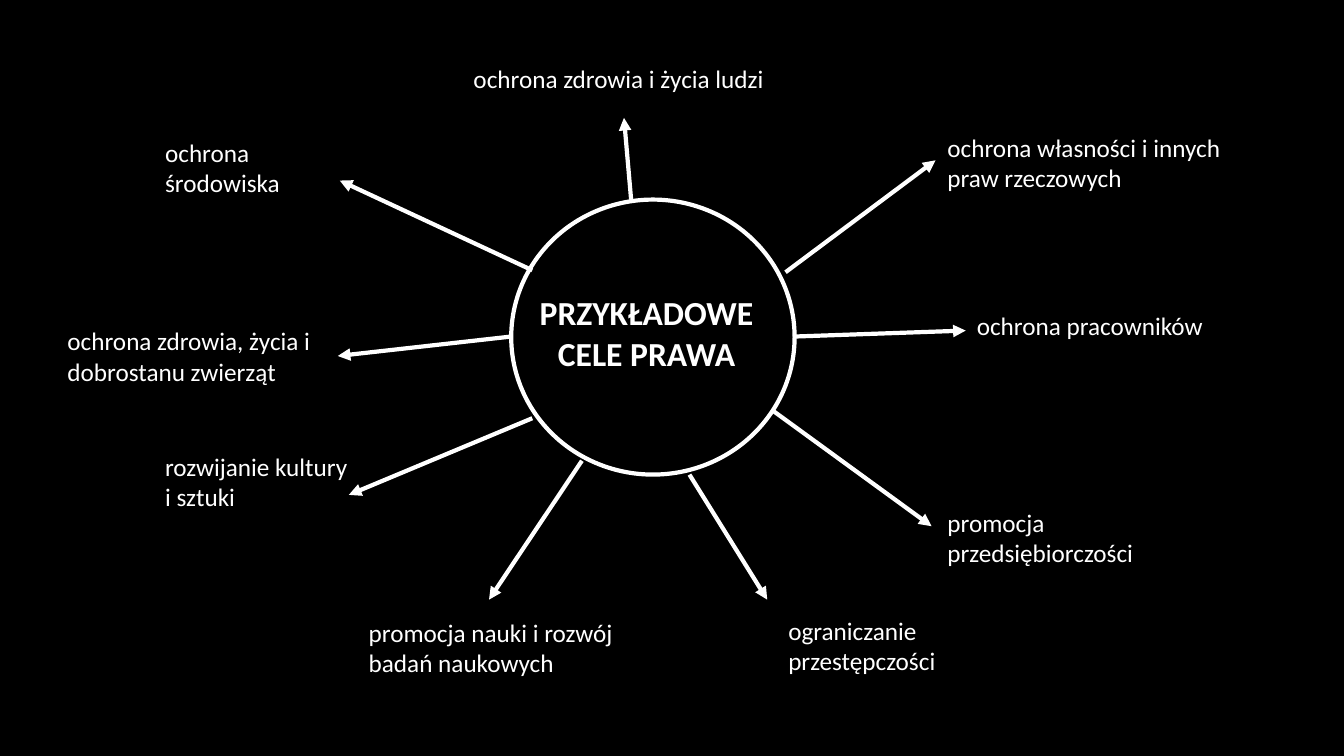
from dataclasses import dataclass

from lxml.etree import SubElement
from pptx import Presentation
from pptx.dml.color import RGBColor
from pptx.enum.shapes import MSO_CONNECTOR, MSO_SHAPE
from pptx.enum.text import MSO_ANCHOR, MSO_AUTO_SIZE, PP_ALIGN
from pptx.oxml.ns import qn
from pptx.util import Cm, Pt


@dataclass(frozen=True)
class Theme:
    background: RGBColor = RGBColor(0, 0, 0)
    foreground: RGBColor = RGBColor(255, 255, 255)
    font: str = "Calibri"
    title_size: int = 24
    label_size: int = 18
    line_width: int = 3


@dataclass(frozen=True)
class Box:
    left: float
    top: float
    width: float
    height: float

    def inside(self, left, top, width, height):
        return Box(self.left + left, self.top + top, width, height)

    def lengths(self):
        return [Cm(value) for value in (self.left, self.top, self.width, self.height)]


@dataclass(frozen=True)
class Goal:
    text: str
    place: tuple
    start: tuple
    end: tuple


THEME = Theme()
SLIDE_BOX = Box(0, 0, 33.86, 19.05)
CIRCLE_PLACE = (12.88, 5.03, 7.14, 6.93)
TITLE_OFFSET = (0.07, 2.21, 6.68, 2.31)
ONE_LINE = 1.02
TWO_LINES = 1.8

GOALS = [
    Goal("ochrona zdrowia i życia ludzi", (11.68, 1.47, 9.25, ONE_LINE), (15.9, 5.03), (15.72, 2.97)),
    Goal("ochrona własności i innych praw rzeczowych", (23.62, 3.2, 7.47, TWO_LINES), (19.79, 6.86), (23.57, 4.04)),
    Goal("ochrona pracowników", (24.36, 7.7, 6.99, ONE_LINE), (20.02, 8.48), (24.33, 8.33)),
    Goal("promocja przedsiębiorczości", (23.62, 12.65, 6.88, TWO_LINES), (19.46, 10.34), (23.47, 13.26)),
    Goal("ograniczanie przestępczości", (19.61, 15.37, 5.16, TWO_LINES), (17.37, 11.96), (19.33, 15.11)),
    Goal("promocja nauki i rozwój badań naukowych", (9.04, 15.42, 7.57, TWO_LINES), (14.66, 11.61), (12.32, 15.11)),
    Goal("rozwijanie kultury i sztuki", (3.91, 11.25, 5.16, TWO_LINES), (13.41, 10.54), (8.79, 12.47)),
    Goal("ochrona zdrowia, życia i dobrostanu zwierząt", (1.45, 8.08, 7.06, TWO_LINES), (12.88, 8.48), (8.51, 8.97)),
    Goal("ochrona środowiska", (3.91, 3.33, 5.16, TWO_LINES), (13.41, 6.81), (8.56, 4.55)),
]


def apply_format(target, values):
    for name, value in values.items():
        setattr(target, name, value)


def style_line(line):
    line.color.rgb = THEME.foreground
    line.width = Pt(THEME.line_width)


def write_text(shape, text, size, bold, alignment, anchor):
    frame = shape.text_frame
    frame.text = text
    apply_format(frame, {
        "word_wrap": True,
        "auto_size": MSO_AUTO_SIZE.SHAPE_TO_FIT_TEXT,
        "vertical_anchor": anchor,
    })
    paragraph = frame.paragraphs[0]
    paragraph.alignment = alignment
    apply_format(paragraph.font, {"name": THEME.font, "size": Pt(size), "bold": bold})
    paragraph.font.color.rgb = THEME.foreground


def add_centre(slide, box):
    circle = slide.shapes.add_shape(MSO_SHAPE.OVAL, *box.lengths())
    circle.shadow.inherit = False
    circle.fill.background()
    style_line(circle.line)
    title = slide.shapes.title
    left, top, width, height = box.inside(*TITLE_OFFSET).lengths()
    apply_format(title, {"left": left, "top": top, "width": width, "height": height})
    write_text(title, "PRZYKŁADOWE CELE PRAWA", THEME.title_size, True, PP_ALIGN.CENTER, MSO_ANCHOR.TOP)


def add_arrow(slide, box, start, end):
    points = [Cm(value) for x, y in (start, end) for value in (box.left + x, box.top + y)]
    arrow = slide.shapes.add_connector(MSO_CONNECTOR.STRAIGHT, *points)
    style_line(arrow.line)
    SubElement(arrow.line._get_or_add_ln(), qn("a:tailEnd"), type="triangle")
    SubElement(arrow._element.spPr, qn("a:effectLst"))


def add_goal(slide, box, goal):
    add_arrow(slide, box, goal.start, goal.end)
    label = slide.shapes.add_textbox(*box.inside(*goal.place).lengths())
    write_text(label, goal.text, THEME.label_size, False, PP_ALIGN.LEFT, MSO_ANCHOR.TOP)


def add_goal_map(presentation, box):
    slide = presentation.slides.add_slide(presentation.slide_layouts[5])
    background = slide.background.fill
    background.solid()
    background.fore_color.rgb = THEME.background
    add_centre(slide, box.inside(*CIRCLE_PLACE))
    for goal in GOALS:
        add_goal(slide, box, goal)


def main():
    presentation = Presentation()
    apply_format(presentation, {"slide_width": Cm(SLIDE_BOX.width), "slide_height": Cm(SLIDE_BOX.height)})
    add_goal_map(presentation, SLIDE_BOX)
    presentation.save("out.pptx")


if __name__ == "__main__":
    main()
